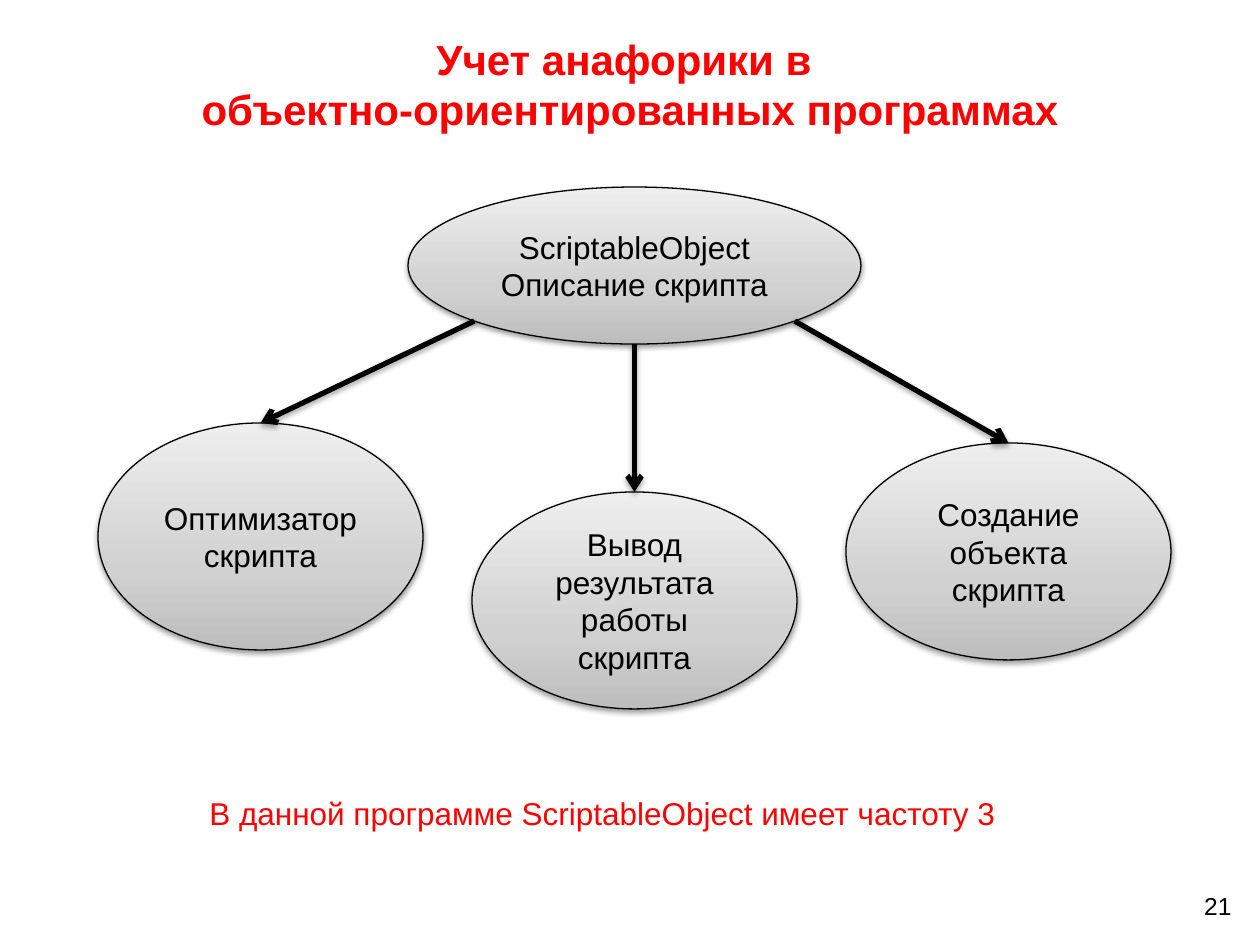
from copy import deepcopy
from math import sqrt

from lxml.etree import SubElement
from pptx import Presentation
from pptx.dml.color import RGBColor
from pptx.enum.shapes import MSO_CONNECTOR, MSO_SHAPE
from pptx.enum.text import MSO_ANCHOR, MSO_AUTO_SIZE, PP_ALIGN
from pptx.oxml.ns import qn
from pptx.util import Emu, Pt

PX = 914400 / 126
COLORS = {
    "black": "000000",
    "red": "FF0000",
    "dark": "BDBDBD",
    "mid": "D1D1D1",
    "light": "EEEEEE",
}
GRADIENT = [(0, "dark"), (0.35, "mid"), (1, "light")]


def px(value):
    return Emu(round(value * PX))


def rgb(name):
    return RGBColor.from_string(COLORS[name])


class Diagram:
    font = "Arial"

    def __init__(self, slide):
        self.s = slide

    def label(self, sp, lines, size=18, color="black", bold=False,
              align=PP_ALIGN.CENTER, **frame):
        tf = sp.text_frame
        for name, value in {"word_wrap": True, **frame}.items():
            setattr(tf, name, value)
        tf.text = "\n".join(lines)
        font = {"name": self.font, "size": Pt(size), "bold": bold}
        for p in tf.paragraphs:
            p.alignment = align
            for r in p.runs:
                for name, value in font.items():
                    setattr(r.font, name, value)
                r.font.color.rgb = rgb(color)

    def text(self, box, lines, **style):
        sp = self.s.shapes.add_textbox(*map(px, box))
        self.label(sp, lines, **style)

    def shadow(self, sp, alpha, distance):
        """Add a soft black shadow that falls straight down."""
        effects = SubElement(sp._element.spPr, qn("a:effectLst"))
        outer = SubElement(effects, qn("a:outerShdw"), blurRad="40000",
                           dist=str(distance), dir="5400000", rotWithShape="0")
        clr = SubElement(outer, qn("a:srgbClr"), val=COLORS["black"])
        SubElement(clr, qn("a:alpha"), val=str(alpha * 1000))

    def stroke(self, sp, width):
        sp.line.color.rgb = rgb("black")
        sp.line.width = Pt(width)

    def ellipse(self, box, lines):
        sp = self.s.shapes.add_shape(MSO_SHAPE.OVAL, *map(px, box))
        sp.fill.gradient()
        sp.fill.gradient_angle = 90
        stops = sp._element.spPr.find(".//" + qn("a:gsLst"))
        stops.append(deepcopy(stops[0]))
        for stop, (position, color) in zip(sp.fill.gradient_stops, GRADIENT):
            stop.position = position
            stop.color.rgb = rgb(color)
        self.stroke(sp, 0.75)
        self.shadow(sp, 38, 20000)
        self.label(sp, lines, vertical_anchor=MSO_ANCHOR.MIDDLE)
        return sp

    def arrow(self, parent, child, side):
        """Join the lower edge of parent (side -1, 0 or 1) to the top of child."""
        drop = sqrt(0.5) if side else 1
        x = parent.left + parent.width / 2 * (1 + side * sqrt(0.5))
        y = parent.top + parent.height / 2 * (1 + drop)
        line = self.s.shapes.add_connector(
            MSO_CONNECTOR.STRAIGHT, Emu(round(x)), Emu(round(y)),
            child.left + child.width // 2, child.top)
        line.end_connect(child, 0)
        self.stroke(line, 3)
        ln = line._element.spPr.find(qn("a:ln"))
        SubElement(ln, qn("a:tailEnd"), type="arrow")
        self.shadow(line, 35, 23000)


def main():
    prs = Presentation()
    prs.slide_width, prs.slide_height = px(1260), px(945)
    d = Diagram(prs.slides.add_slide(prs.slide_layouts[6]))

    d.text((904, 885, 340, 42), ["21"], size=14, align=PP_ALIGN.RIGHT)
    d.text((0, 20, 1260, 128),
           ["Учет анафорики в \vобъектно-ориентированных программах"],
           size=24, color="red", bold=True, vertical_anchor=MSO_ANCHOR.MIDDLE)

    root = d.ellipse((408, 187, 453, 157), ["ScriptableObject", "Описание скрипта"])
    children = [
        d.ellipse((98, 423, 325, 227), ["Оптимизатор скрипта"]),
        d.ellipse((472, 492, 325, 217), ["Вывод результата работы скрипта"]),
        d.ellipse((846, 443, 325, 217), ["Создание объекта скрипта"]),
    ]
    for side, child in zip((-1, 0, 1), children):
        d.arrow(root, child, side)

    d.text((197, 788, 819, 50),
           ["В данной программе ScriptableObject имеет частоту 3"],
           color="red", align=PP_ALIGN.LEFT, word_wrap=False,
           auto_size=MSO_AUTO_SIZE.SHAPE_TO_FIT_TEXT)

    prs.save("out.pptx")


if __name__ == "__main__":
    main()
